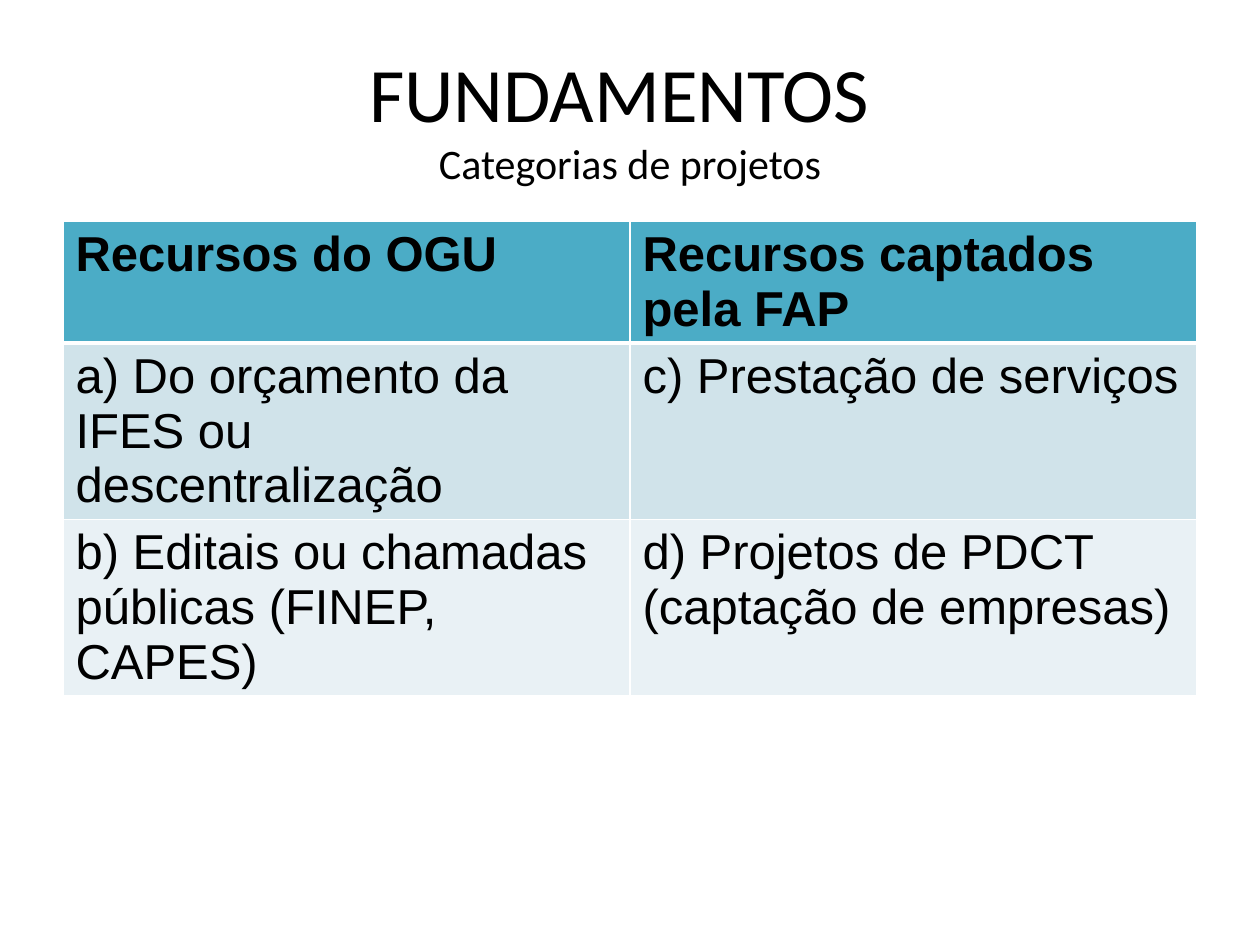
import dataclasses

import pptx
import pptx.dml.color
import pptx.enum.text
import pptx.oxml
import pptx.oxml.ns
import pptx.util

EMU_PER_PX = 914400 / 126


@dataclasses.dataclass(frozen=True)
class Theme:
    title_font: str = "Calibri"
    table_font: str = "Arial"
    title_size: int = 44
    subtitle_size: int = 24
    table_size: int = 28
    text: str = "000000"
    border: str = "FFFFFF"
    row_fills: tuple = ("4BACC6", "D0E3EA", "E9F1F5")


THEME = Theme()

CATEGORIES = [
    ("Recursos do OGU", "Recursos captados pela FAP"),
    ("a) Do orçamento da IFES ou descentralização", "c) Prestação de serviços"),
    ("b) Editais ou chamadas públicas (FINEP, CAPES)",
     "d) Projetos de PDCT (captação de empresas)"),
]
ROW_HEIGHTS = (100, 142, 140)


def px(length):
    return pptx.util.Emu(round(length * EMU_PER_PX))


def rgb(value):
    return pptx.dml.color.RGBColor.from_string(value)


def add_run(paragraph, text, name, size, bold=False):
    run = paragraph.add_run()
    run.text = text
    style = {"name": name, "size": pptx.util.Pt(size), "bold": bold}
    for attribute, value in style.items():
        setattr(run.font, attribute, value)
    run.font.color.rgb = rgb(THEME.text)


def add_heading(slide, left, top, width, height):
    heading = slide.shapes.title
    place = {"left": left, "top": top, "width": width, "height": height}
    for attribute, value in place.items():
        setattr(heading, attribute, px(value))
    frame = heading.text_frame
    frame.word_wrap = True
    frame.auto_size = pptx.enum.text.MSO_AUTO_SIZE.NONE
    frame.vertical_anchor = pptx.enum.text.MSO_ANCHOR.MIDDLE
    line = frame.paragraphs[0]
    line.alignment = pptx.enum.text.PP_ALIGN.CENTER
    # The trailing tab sets the first line slightly left of centre
    add_run(line, "FUNDAMENTOS\t ", THEME.title_font, THEME.title_size)
    line.add_line_break()
    add_run(line, "Categorias de projetos", THEME.title_font, THEME.subtitle_size)


def set_borders(cell, widths):
    properties = cell._tc.get_or_add_tcPr()
    for side, points in widths.items():
        properties.append(pptx.oxml.parse_xml(
            f'<a:ln{side} {pptx.oxml.ns.nsdecls("a")} w="{pptx.util.Pt(points)}">'
            f'<a:solidFill><a:srgbClr val="{THEME.border}"/></a:solidFill>'
            f'</a:ln{side}>'))


def add_category_table(slide, left, top, width):
    table = slide.shapes.add_table(
        len(CATEGORIES), len(CATEGORIES[0]),
        px(left), px(top), px(width), px(sum(ROW_HEIGHTS))).table
    for row_index, texts in enumerate(CATEGORIES):
        table.rows[row_index].height = px(ROW_HEIGHTS[row_index])
        is_header = row_index == 0
        for column_index, text in enumerate(texts):
            cell = table.cell(row_index, column_index)
            # The rule under the header is heavier than the other borders
            set_borders(cell, {"L": 1, "R": 1,
                               "T": 3 if row_index == 1 else 1,
                               "B": 3 if is_header else 1})
            cell.fill.solid()
            cell.fill.fore_color.rgb = rgb(THEME.row_fills[row_index])
            add_run(cell.text_frame.paragraphs[0], text,
                    THEME.table_font, THEME.table_size, is_header)


def main():
    presentation = pptx.Presentation()
    presentation.slide_width = px(1260)
    presentation.slide_height = px(945)
    slide = presentation.slides.add_slide(presentation.slide_layouts[5])

    # Title and subtitle
    add_heading(slide, 63, 38, 1134, 158)

    # Project categories by source of funds
    add_category_table(slide, 63, 221, 1134)

    presentation.save("out.pptx")


if __name__ == "__main__":
    main()
